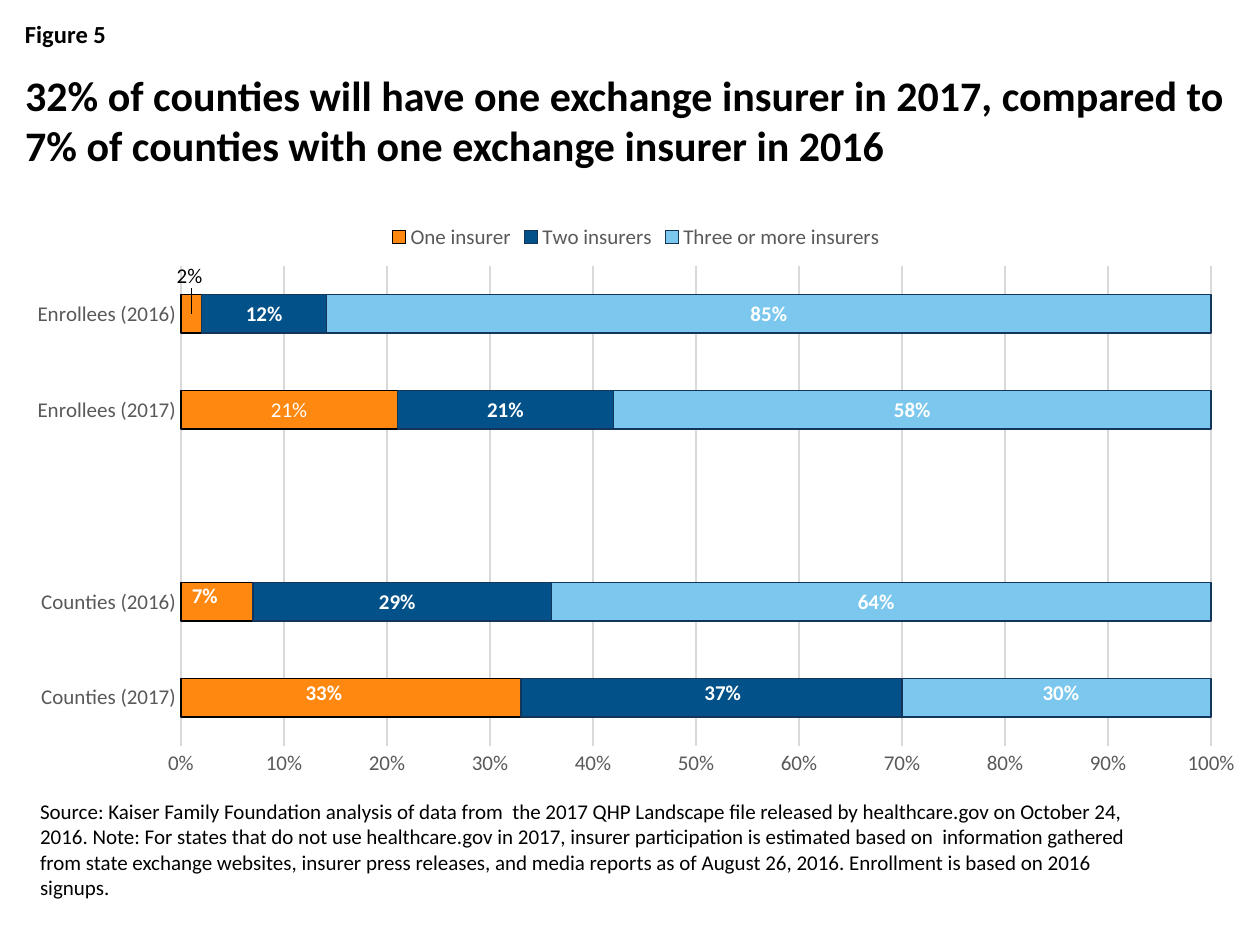
from lxml import etree
from pptx import Presentation
from pptx.chart.data import CategoryChartData
from pptx.dml.color import RGBColor
from pptx.enum.chart import XL_CHART_TYPE, XL_LABEL_POSITION, XL_LEGEND_POSITION, XL_TICK_MARK
from pptx.enum.text import MSO_ANCHOR, PP_ALIGN
from pptx.oxml import parse_xml
from pptx.oxml.ns import qn
from pptx.util import Pt

FONT = "Calibri"
FIGURE = "Figure 5"
TITLE = ("32% of counties will have one exchange insurer in 2017, compared to "
         "7% of counties with one exchange insurer in 2016")
SOURCE = ("Source: Kaiser Family Foundation analysis of data from  the 2017 QHP Landscape file "
          "released by healthcare.gov on October 24, 2016. Note: For states that do not use "
          "healthcare.gov in 2017, insurer participation is estimated based on  information "
          "gathered from state exchange websites, insurer press releases, and media reports as of "
          "August 26, 2016. Enrollment is based on 2016 signups.")
CATEGORIES = ["Counties (2017)", "Counties (2016)", "", "Enrollees (2017)", "Enrollees (2016)"]
# name, values, fill, outline
SERIES = [
    ("One insurer", [0.33, 0.07, None, 0.21, 0.02], "FF8811", "000000"),
    ("Two insurers", [0.37, 0.29, None, 0.21, 0.12], "025189", "133559"),
    ("Three or more insurers", [0.30, 0.64, None, 0.58, 0.85], "7BC7ED", "133559"),
]
# (series, category): x and y shift in points, colour, bold
SPECIAL_LABELS = {
    (0, 0): (-15.5, -2.5, "FFFFFF", True),
    (0, 1): (-7, -3, "FFFFFF", True),
    (0, 3): (0, 0, "FFFFFF", False),
    (0, 4): (-1, -21.5, "000000", False),
    (1, 0): (6.5, -2.5, "FFFFFF", True),
    (1, 1): (-3, 0, "FFFFFF", True),
    (2, 0): (2.5, -2.5, "FFFFFF", True),
    (2, 1): (-3, 0, "FFFFFF", True),
}
CHART_BOX = (7.2, 120.25, 712.8, 329.75)
PLOT_BOX = (103.4, 152, 588.6, 274.2)
LEADER_LINES = (
    '<c:extLst xmlns:c="http://schemas.openxmlformats.org/drawingml/2006/chart">'
    '<c:ext uri="{CE6537A1-D6FC-4f65-9D91-7224C49458BB}" '
    'xmlns:c15="http://schemas.microsoft.com/office/drawing/2012/chart">'
    '<c15:showLeaderLines val="1"/></c:ext></c:extLst>')


def rgb(color):
    return RGBColor.from_string(color)


def style_font(font, size, color, bold=False):
    font.name, font.size, font.bold = FONT, Pt(size), bold
    font.color.rgb = rgb(color)


def style_line(line, color):
    line.color.rgb = rgb(color)
    line.width = Pt(0.75)


def fill_text(shape, box, text, size, bold=False, anchor=MSO_ANCHOR.TOP):
    shape.left, shape.top, shape.width, shape.height = map(Pt, box)
    tf = shape.text_frame
    tf.word_wrap, tf.vertical_anchor = True, anchor
    p = tf.paragraphs[0]
    p.alignment = PP_ALIGN.LEFT
    p.line_spacing = 1.0
    p.space_before = Pt(0)
    r = p.add_run()
    r.text = text
    style_font(r.font, size, "000000", bold)


def manual_layout(**settings):
    layout = etree.Element(qn("c:layout"))
    manual = etree.SubElement(layout, qn("c:manualLayout"))
    for tag, value in settings.items():
        etree.SubElement(manual, qn("c:" + tag)).set("val", str(value))
    return layout


def place_plot(chart):
    """Fix the inner plot area at PLOT_BOX within the chart."""
    (cx, cy, cw, ch), (px, py, pw, ph) = CHART_BOX, PLOT_BOX
    area = chart.plots[0]._element.getparent()
    for old in area.findall(qn("c:layout")):
        area.remove(old)
    area.insert(0, manual_layout(
        layoutTarget="inner", xMode="edge", yMode="edge",
        x=(px - cx) / cw, y=(py - cy) / ch, w=pw / cw, h=ph / ch))


def style_labels(series):
    labels = series.data_labels
    labels.show_value = True
    labels.number_format, labels.number_format_is_linked = "0%", False
    labels.position = XL_LABEL_POSITION.CENTER
    style_font(labels.font, 12, "FFFFFF", True)
    labels._element.append(parse_xml(LEADER_LINES))


def adjust_label(series, index, dx, dy, color, bold):
    label = series.points[index].data_label
    style_font(label.font, 12, color, bold)
    label.position = XL_LABEL_POSITION.CENTER
    if dx or dy:
        idx = series.data_labels._element.xpath(f"c:dLbl/c:idx[@val='{index}']")[0]
        idx.addnext(manual_layout(x=dx / CHART_BOX[2], y=dy / CHART_BOX[3]))


def add_insurer_chart(s):
    data = CategoryChartData(number_format="0%")
    data.categories = CATEGORIES
    for name, values, _, _ in SERIES:
        data.add_series(name, values)
    chart = s.shapes.add_chart(
        XL_CHART_TYPE.BAR_STACKED_100, *map(Pt, CHART_BOX), data).chart
    style_font(chart.font, 10, "000000")
    chart.has_title = False
    chart.has_legend = True
    chart.legend.position = XL_LEGEND_POSITION.TOP
    chart.legend.include_in_layout = False
    style_font(chart.legend.font, 12, "595959")

    for axis in (chart.category_axis, chart.value_axis):
        axis.major_tick_mark = axis.minor_tick_mark = XL_TICK_MARK.NONE
        style_font(axis.tick_labels.font, 12, "595959")
    style_line(chart.category_axis.format.line, "D9D9D9")
    values = chart.value_axis
    values.minimum_scale, values.maximum_scale, values.major_unit = 0, 1, 0.1
    values.format.line.fill.background()
    values.has_major_gridlines = True
    style_line(values.major_gridlines.format.line, "D9D9D9")
    values.tick_labels.number_format = "0%"
    values.tick_labels.number_format_is_linked = False

    plot = chart.plots[0]
    plot.gap_width, plot.overlap, plot.vary_by_categories = 150, 100, False
    for series, (_, _, fill, outline) in zip(plot.series, SERIES):
        series.format.fill.solid()
        series.format.fill.fore_color.rgb = rgb(fill)
        style_line(series.format.line, outline)
        style_labels(series)
    for (row, index), settings in SPECIAL_LABELS.items():
        adjust_label(plot.series[row], index, *settings)
    place_plot(chart)


def main():
    prs = Presentation()
    prs.slide_width, prs.slide_height = Pt(720), Pt(540)
    s = prs.slides.add_slide(prs.slide_layouts[5])
    fill_text(s.shapes.title, (7.2, 36, 705.6, 72), TITLE, 24, True)
    fill_text(s.shapes.add_textbox(0, 0, 0, 0), (7.2, 7.2, 705.6, 24.5), FIGURE, 14, True)
    add_insurer_chart(s)
    fill_text(s.shapes.add_textbox(0, 0, 0, 0), (15.8, 462.2, 646.6, 55.4), SOURCE, 12,
              anchor=MSO_ANCHOR.BOTTOM)
    prs.save("out.pptx")


if __name__ == "__main__":
    main()
